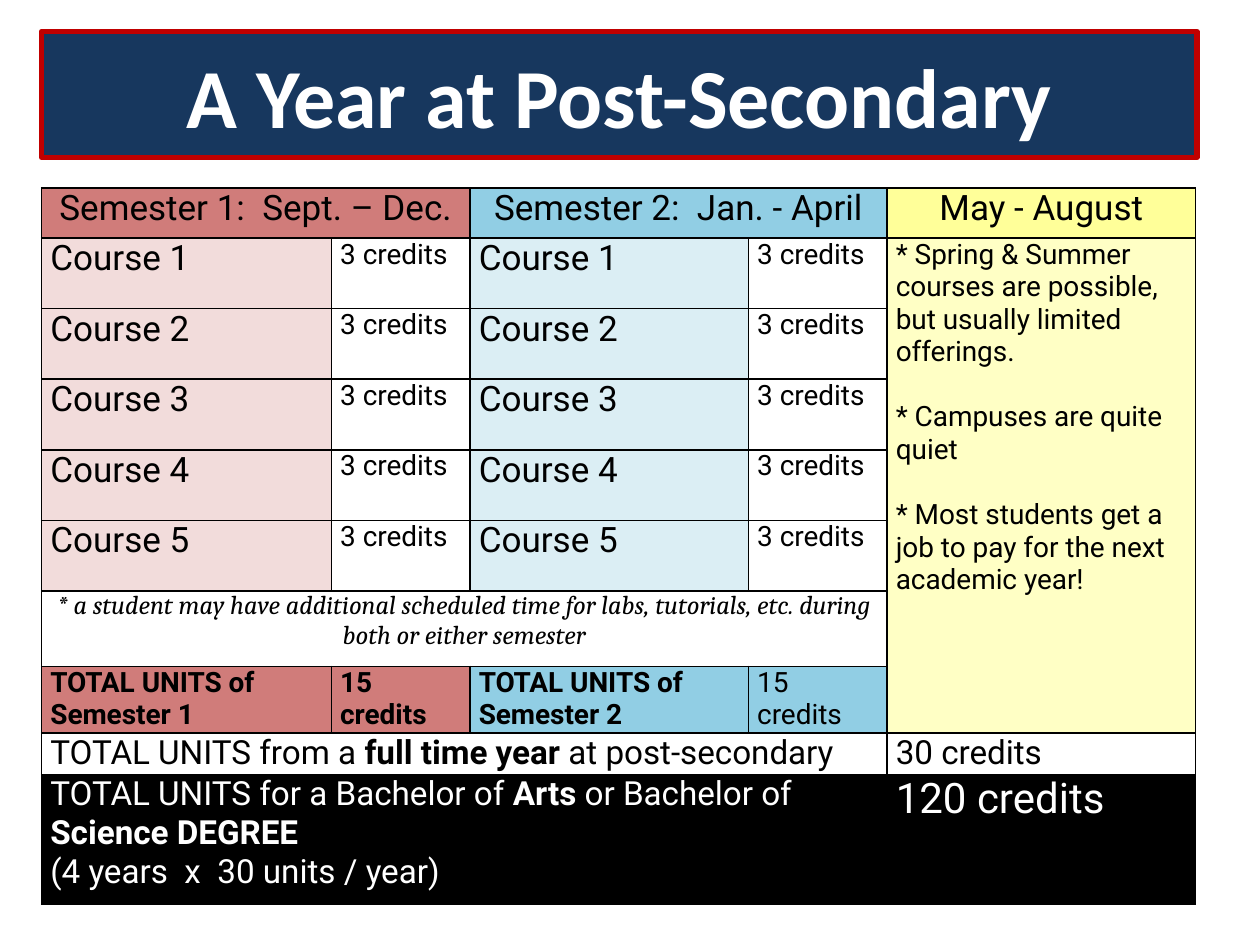
from lxml import etree
from pptx import Presentation
from pptx.dml.color import RGBColor
from pptx.enum import shapes, text
from pptx.oxml.ns import qn
from pptx.util import Inches, Pt

TITLE = "A Year at Post-Secondary"
LEFT, WIDTH = 0.33, 9.17
COLUMNS = [2.3, 1.1, 2.21, 1.1, 2.45]
COURSES = 5
ROWS = [0.4] + [0.56] * COURSES + [0.6, 0.53, 0.33, 1.03]
NOTE_ROW, TOTAL_ROW, YEAR_ROW, DEGREE_ROW = range(COURSES + 1, COURSES + 5)

BLACK, WHITE = "000000", "FFFFFF"
SUMMER_HEADER, SUMMER = "FFFF99", "FFFFC5"
# first column, heading, strong fill, pale fill, total in bold
SEMESTERS = [
    (0, "Semester 1:  Sept. – Dec.", "D07C7A", "F2DCDB", True),
    (2, "Semester 2:  Jan. - April", "91CEE4", "DBEEF4", False),
]
SUMMER_NOTES = [
    "* Spring & Summer courses are possible, but usually limited offerings.",
    "* Campuses are quite quiet",
    "* Most students get a job to pay for the next academic year!",
]
LAB_NOTE = ("* a student may have additional scheduled time for labs, tutorials, etc. "
            "during both or either semester")
# Each paragraph is a list of runs; every second run is bold.
YEAR_TOTAL = [["TOTAL UNITS from a ", "full time year ", "at post-secondary"]]
DEGREE_TOTAL = [
    ["TOTAL UNITS for a Bachelor of", " Arts", " or Bachelor of", " Science DEGREE"],
    ["(4 years  x  30 units / year)"],
]


def color(value):
    return RGBColor.from_string(value)


def style(font, size, name="Roboto", ink=BLACK, bold=False, italic=False):
    font.size, font.name, font.bold, font.italic = Pt(size), name, bold, italic
    font.color.rgb = color(ink)


def add_borders(cell):
    properties = cell._tc.get_or_add_tcPr()
    for position, side in enumerate(("lnL", "lnR", "lnT", "lnB")):
        line = etree.Element(qn(f"a:{side}"), w=str(Pt(1)))
        fill = etree.SubElement(line, qn("a:solidFill"))
        etree.SubElement(fill, qn("a:srgbClr"), val=BLACK)
        properties.insert(position, line)


def fill_cell(row, column, paragraphs, fill, size, to=None, center=False, gap=0, **font):
    """Write a cell, merged through the (row, column) given as to."""
    cell = table.cell(row, column)
    if to:
        cell.merge(table.cell(*to))
    cell.fill.solid()
    cell.fill.fore_color.rgb = color(fill)
    cell.margin_left = cell.margin_right = Inches(0.07)
    cell.margin_top = cell.margin_bottom = 0
    frame = cell.text_frame
    if isinstance(paragraphs, str):
        paragraphs = [[paragraphs]]
    for index, runs in enumerate(paragraphs):
        paragraph = frame.add_paragraph() if index else frame.paragraphs[0]
        style(paragraph.font, size, **font)
        if center:
            paragraph.alignment = text.PP_ALIGN.CENTER
        if index:
            paragraph.space_before = Pt(gap)
        for number, words in enumerate(runs):
            run = paragraph.add_run()
            run.text = words
            if number % 2:
                run.font.bold = True


presentation = Presentation()
presentation.slide_width, presentation.slide_height = Inches(10), Inches(7.5)
slide = presentation.slides.add_slide(presentation.slide_layouts[6])

table = slide.shapes.add_table(
    len(ROWS), len(COLUMNS), Inches(LEFT), Inches(1.49), Inches(WIDTH), Inches(sum(ROWS))
).table
for column, width in zip(table.columns, COLUMNS):
    column.width = Inches(width)
for row, height in zip(table.rows, ROWS):
    row.height = Inches(height)

for first, heading, strong, pale, bold_total in SEMESTERS:
    fill_cell(0, first, heading, strong, 20, to=(0, first + 1), center=True)
    for course in range(1, COURSES + 1):
        fill_cell(course, first, f"Course {course}", pale, 20)
        fill_cell(course, first + 1, "3 credits", WHITE, 16)
    semester = heading.split(":")[0]
    fill_cell(TOTAL_ROW, first, f"TOTAL UNITS of {semester}", strong, 16, bold=True)
    fill_cell(TOTAL_ROW, first + 1, "15 credits", strong, 16, bold=bold_total)

fill_cell(0, 4, "May - August", SUMMER_HEADER, 20, center=True)
fill_cell(1, 4, [[note] for note in SUMMER_NOTES], SUMMER, 16, to=(TOTAL_ROW, 4), gap=18.75)
fill_cell(NOTE_ROW, 0, LAB_NOTE, WHITE, 15, to=(NOTE_ROW, 3), center=True,
          name="Cambria", italic=True)
fill_cell(YEAR_ROW, 0, YEAR_TOTAL, WHITE, 19, to=(YEAR_ROW, 3))
fill_cell(YEAR_ROW, 4, "30 credits", WHITE, 19)
fill_cell(DEGREE_ROW, 0, DEGREE_TOTAL, BLACK, 19, to=(DEGREE_ROW, 3), ink=WHITE)
fill_cell(DEGREE_ROW, 4, "120 credits", BLACK, 24, ink=WHITE)
for cell in table.iter_cells():
    add_borders(cell)

banner = slide.shapes.add_shape(
    shapes.MSO_SHAPE.RECTANGLE, Inches(LEFT), Inches(0.25), Inches(WIDTH), Inches(1))
banner.shadow.inherit = False
banner.fill.solid()
banner.fill.fore_color.rgb = color("17375E")
banner.line.color.rgb = color("C00000")
banner.line.width = Pt(3)
banner.text_frame.vertical_anchor = text.MSO_ANCHOR.MIDDLE
paragraph = banner.text_frame.paragraphs[0]
paragraph.text = TITLE
paragraph.alignment = text.PP_ALIGN.CENTER
style(paragraph.font, 48, name="Calibri", ink=WHITE, bold=True)

presentation.save("out.pptx")
